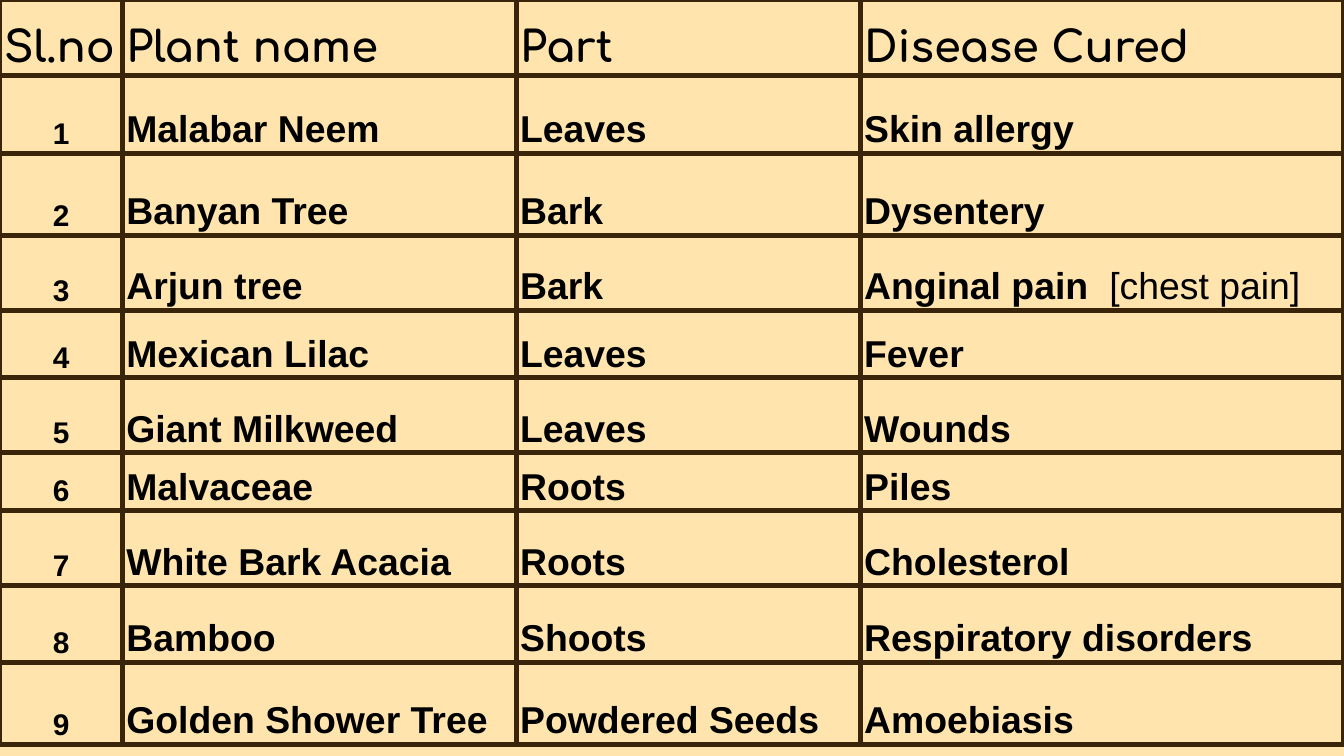
from lxml.etree import SubElement
from pptx import Presentation
from pptx.dml.color import RGBColor
from pptx.enum.text import MSO_ANCHOR, PP_ALIGN
from pptx.oxml.ns import qn
from pptx.util import Inches, Pt

COLORS = {"page": "FFE4AE", "line": "3A250A", "text": "000000"}
WIDTHS = [0.91, 2.93, 2.56, 3.6]
HEIGHTS = [0.56, 0.58, 0.61, 0.56, 0.5, 0.56, 0.43, 0.56, 0.57, 0.61]
HEADS = ["Sl.no", "Plant name", "Part", "Disease Cured"]
PLANTS = [
    ("Malabar Neem", "Leaves", ["Skin allergy"]),
    ("Banyan Tree", "Bark", ["Dysentery"]),
    ("Arjun tree", "Bark", ["Anginal pain ", " [chest pain]"]),
    ("Mexican Lilac", "Leaves", ["Fever"]),
    ("Giant Milkweed", "Leaves", ["Wounds"]),
    ("Malvaceae", "Roots", ["Piles"]),
    ("White Bark Acacia", "Roots", ["Cholesterol"]),
    ("Bamboo", "Shoots", ["Respiratory disorders"]),
    ("Golden Shower Tree", "Powdered Seeds", ["Amoebiasis"]),
]


def add_border(cell):
    props = cell._tc.get_or_add_tcPr()
    for spot, side in enumerate(("lnL", "lnR", "lnT", "lnB")):
        line = SubElement(props, qn(f"a:{side}"), w=str(Pt(3)))
        fill = SubElement(line, qn("a:solidFill"))
        SubElement(fill, qn("a:srgbClr"), val=COLORS["line"])
        props.insert(spot, line)


def fill_cell(cell, parts, size, face="Arial", align=PP_ALIGN.LEFT):
    cell.fill.background()
    cell.vertical_anchor = MSO_ANCHOR.BOTTOM
    cell.margin_left = cell.margin_right = Inches(0.03)
    cell.margin_top = cell.margin_bottom = Inches(0.02)
    para = cell.text_frame.paragraphs[0]
    para.alignment = align
    para.line_spacing = 1.15
    para.font.name = face
    para.font.size = Pt(size)
    para.font.bold = True
    para.font.color.rgb = RGBColor.from_string(COLORS["text"])
    for spot, part in enumerate(parts):
        run = para.add_run()
        run.text = part
        if spot:
            run.font.bold = False
    add_border(cell)


def add_grid(slide):
    frame = slide.shapes.add_table(
        len(HEIGHTS), len(WIDTHS), 0, 0,
        Inches(sum(WIDTHS)), Inches(sum(HEIGHTS)))
    table = frame.table
    table.first_row = False
    table.horz_banding = False
    for column, width in zip(table.columns, WIDTHS):
        column.width = Inches(width)
    for row, height in zip(table.rows, HEIGHTS):
        row.height = Inches(height)
    return table


def main():
    deck = Presentation()
    deck.slide_width = Inches(10)
    deck.slide_height = deck.slide_width * 9 // 16
    slide = deck.slides.add_slide(deck.slide_layouts[6])
    fill = slide.background.fill
    fill.solid()
    fill.fore_color.rgb = RGBColor.from_string(COLORS["page"])
    table = add_grid(slide)
    for col, head in enumerate(HEADS):
        fill_cell(table.cell(0, col), [head], 23, "Comfortaa")
    for row, (plant, part, cure) in enumerate(PLANTS, 1):
        fill_cell(table.cell(row, 0), [str(row)], 16, align=PP_ALIGN.CENTER)
        for col, parts in enumerate(([plant], [part], cure), 1):
            fill_cell(table.cell(row, col), parts, 20)
    deck.save("out.pptx")


if __name__ == "__main__":
    main()
